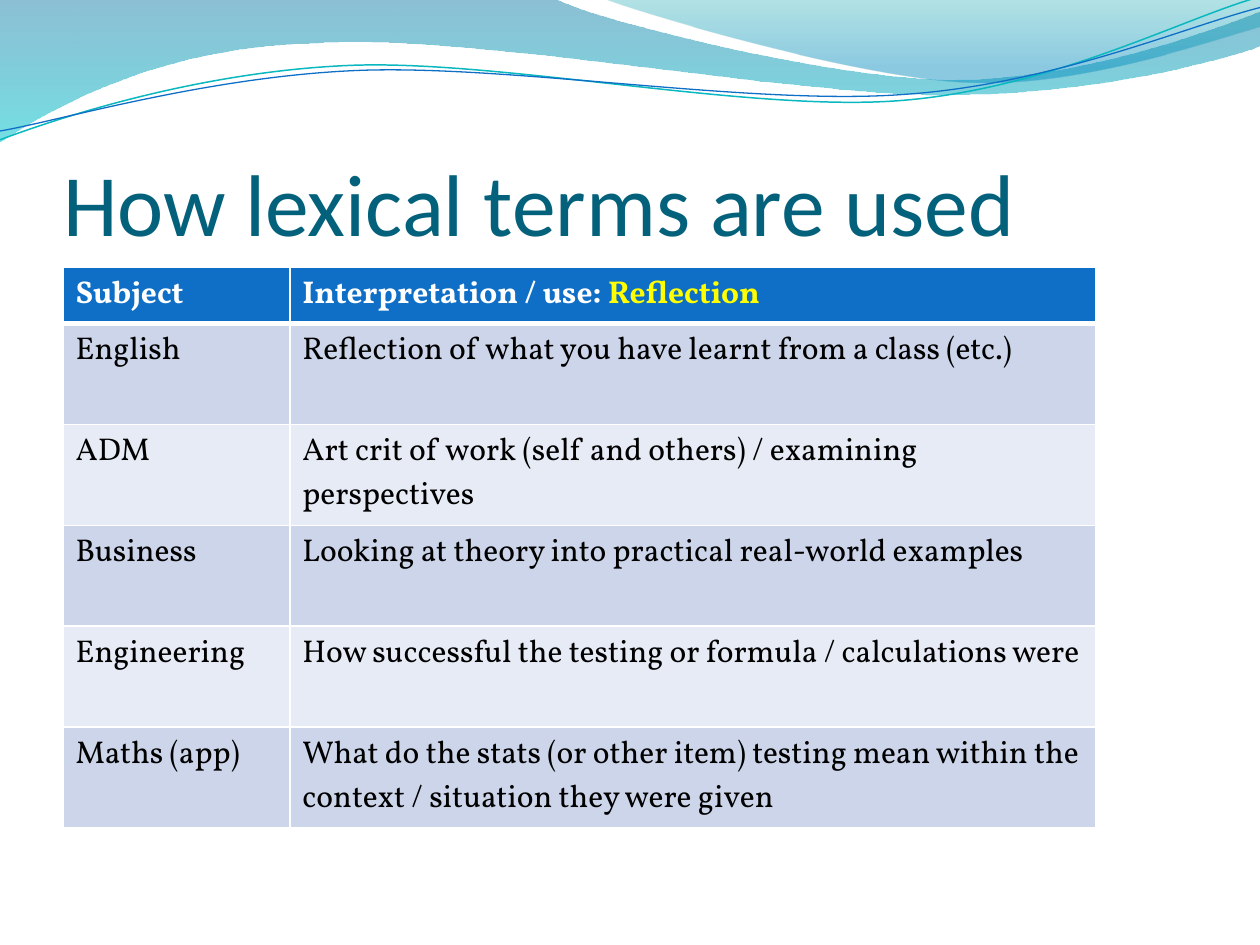
from lxml.etree import SubElement
from pptx import Presentation
from pptx.dml.color import RGBColor
from pptx.enum.text import MSO_ANCHOR, MSO_AUTO_SIZE, PP_ALIGN
from pptx.oxml.ns import qn
from pptx.util import Inches, Pt

BAND_LEFT = [
    [(0, 0)],
    [(4.4, -0.01)],
    [(4.76, 0.17), (6.64, 0.63), (7.58, 0.63)],
    [(8.53, 0.63), (9.58, 0.26), (10, 0.09)],
    [(10.01, 0.36)],
    [(9.83, 0.44), (8.7, 0.76), (7.46, 0.75)],
    [(6.22, 0.75), (3.82, 0.28), (2.57, 0.34)],
    [(1.29, 0.36), (0.46, 0.83), (-0.01, 1.13)],
    [(0, 0)],
]
BAND_RIGHT = [
    [(4.79, -0.01)],
    [(5.09, 0.11), (6.82, 0.62), (7.69, 0.65)],
    [(8.56, 0.69), (9.61, 0.32), (10, 0.21)],
    [(10, 0)],
    [(4.79, -0.01)],
]
LINE_TEAL = [
    [(0, 1.11)],
    [(0.48, 0.93), (1.58, 0.57), (2.77, 0.52)],
    [(3.95, 0.47), (5.93, 0.89), (7.13, 0.8)],
    [(8.33, 0.71), (9.38, 0.15), (9.98, -0.02)],
]
LINE_BLUE = [
    [(0, 1.04)],
    [(0.47, 0.96), (1.64, 0.61), (2.83, 0.56)],
    [(4.03, 0.51), (5.97, 0.84), (7.17, 0.75)],
    [(8.36, 0.67), (9.41, 0.21), (10, 0.06)],
]

HEADER = [[("Subject", "FFFFFF")],
          [("Interpretation / use: ", "FFFFFF"), ("Reflection", "FFFF00")]]
USES = [
    ("English", "Reflection of what you have learnt from a class (etc.)"),
    ("ADM", "Art crit of work (self and others) / examining perspectives"),
    ("Business", "Looking at theory into practical real-world examples"),
    ("Engineering", "How successful the testing or formula / calculations were"),
    ("Maths (app)", "What do the stats (or other item) testing mean within the "
                    "context / situation they were given"),
]


def rgb(value):
    """Turn a hex string into a colour."""
    return RGBColor.from_string(value)


def add_outline(s, segments, close):
    """Draw an outline of straight and cubic segments."""
    ends = [(Inches(segment[-1][0]), Inches(segment[-1][1])) for segment in segments]
    builder = s.shapes.build_freeform(*ends[0])
    builder.add_line_segments(ends[1:], close=close)
    sp = builder.convert_to_shape()
    sp.shadow.inherit = False
    lines = list(sp._element.iter(qn("a:lnTo")))
    for line, segment in zip(lines, segments[1:]):
        if len(segment) == 3:
            bend(line, segment, sp.left, sp.top)
    return sp


def bend(line, points, left, top):
    """Replace a straight segment by a cubic curve."""
    curve = line.makeelement(qn("a:cubicBezTo"))
    for x, y in points:
        SubElement(curve, qn("a:pt"), x=str(Inches(x) - left), y=str(Inches(y) - top))
    line.getparent().replace(line, curve)


def add_band(s, segments, stops):
    """Add a wave filled with a translucent top-to-bottom gradient."""
    sp = add_outline(s, segments, True)
    sp.line.fill.background()
    sp.fill.gradient()
    sp.fill.gradient_angle = 270
    for stop, (position, color, _) in zip(sp.fill.gradient_stops, stops):
        stop.position = position
        stop.color.rgb = rgb(color)
    colors = sp._element.spPr.iter(qn("a:srgbClr"))
    for element, (_, _, opacity) in zip(colors, stops):
        SubElement(element, qn("a:alpha"), val=str(opacity * 1000))


def add_wave_line(s, segments, color, width):
    """Add a thin open curve."""
    sp = add_outline(s, segments, False)
    sp.fill.background()
    sp.line.color.rgb = rgb(color)
    sp.line.width = Pt(width)


def set_title(s, text):
    """Place and format the title placeholder."""
    sp = s.shapes.title
    sp.left, sp.top, sp.width, sp.height = (Inches(v) for v in (0.5, 0.77, 9, 1.25))
    tf = sp.text_frame
    tf.text = text
    tf.auto_size = MSO_AUTO_SIZE.NONE
    tf.word_wrap = True
    tf.vertical_anchor = MSO_ANCHOR.BOTTOM
    tf.margin_left = tf.margin_right = tf.margin_bottom = 0
    tf.margin_top = Inches(0.05)
    p = tf.paragraphs[0]
    p.alignment = PP_ALIGN.LEFT
    p.font.name, p.font.size = "Calibri", Pt(50)
    p.font.color.rgb = rgb("04617B")


def set_borders(cell, top, bottom):
    """Give a cell white borders, with the top and bottom widths in points."""
    tc_pr = cell._tc.get_or_add_tcPr()
    for side, width in (("L", 1), ("R", 1), ("T", top), ("B", bottom)):
        ln = SubElement(tc_pr, qn(f"a:ln{side}"), w=str(Pt(width)))
        SubElement(SubElement(ln, qn("a:solidFill")), qn("a:srgbClr"), val="FFFFFF")


def fill_cell(cell, runs, fill, bold):
    """Write coloured runs in a cell and fill it."""
    cell.fill.solid()
    cell.fill.fore_color.rgb = rgb(fill)
    p = cell.text_frame.paragraphs[0]
    p.font.name, p.font.size, p.font.bold = "Vollkorn", Pt(18), bold
    for text, color in runs:
        r = p.add_run()
        r.text = text
        r.font.color.rgb = rgb(color)


def add_uses_table(s):
    """Add the table of subjects and how each uses the term."""
    rows = [HEADER] + [[[(text, "000000")] for text in row] for row in USES]
    table = s.shapes.add_table(len(rows), 2, Inches(0.5), Inches(2.12),
                               Inches(8.2), Inches(4.44)).table
    for column, width in zip(table.columns, (1.8, 6.4)):
        column.width = Inches(width)
    for i, row in enumerate(rows):
        table.rows[i].height = Inches(0.8 if i else 0.44)
        fill = ("CCD5EA" if i % 2 else "E7EBF5") if i else "0F6FC6"
        for j, runs in enumerate(row):
            cell = table.cell(i, j)
            set_borders(cell, 3 if i == 1 else 1, 3 if i == 0 else 1)
            fill_cell(cell, runs, fill, i == 0)


def main():
    """Build the slide and save it."""
    prs = Presentation()
    prs.slide_width, prs.slide_height = Inches(10), Inches(7.5)
    s = prs.slides.add_slide(prs.slide_layouts[5])
    add_band(s, BAND_LEFT, [(0, "0074A1", 45), (1, "00C6CF", 55)])
    add_band(s, BAND_RIGHT, [(0, "00A1A9", 30), (0.8, "008BBF", 45)])
    add_wave_line(s, LINE_TEAL, "0AB8BF", 0.85)
    add_wave_line(s, LINE_BLUE, "0F6FC6", 0.75)
    set_title(s, "How lexical terms are used")
    add_uses_table(s)
    prs.save("out.pptx")


if __name__ == "__main__":
    main()
